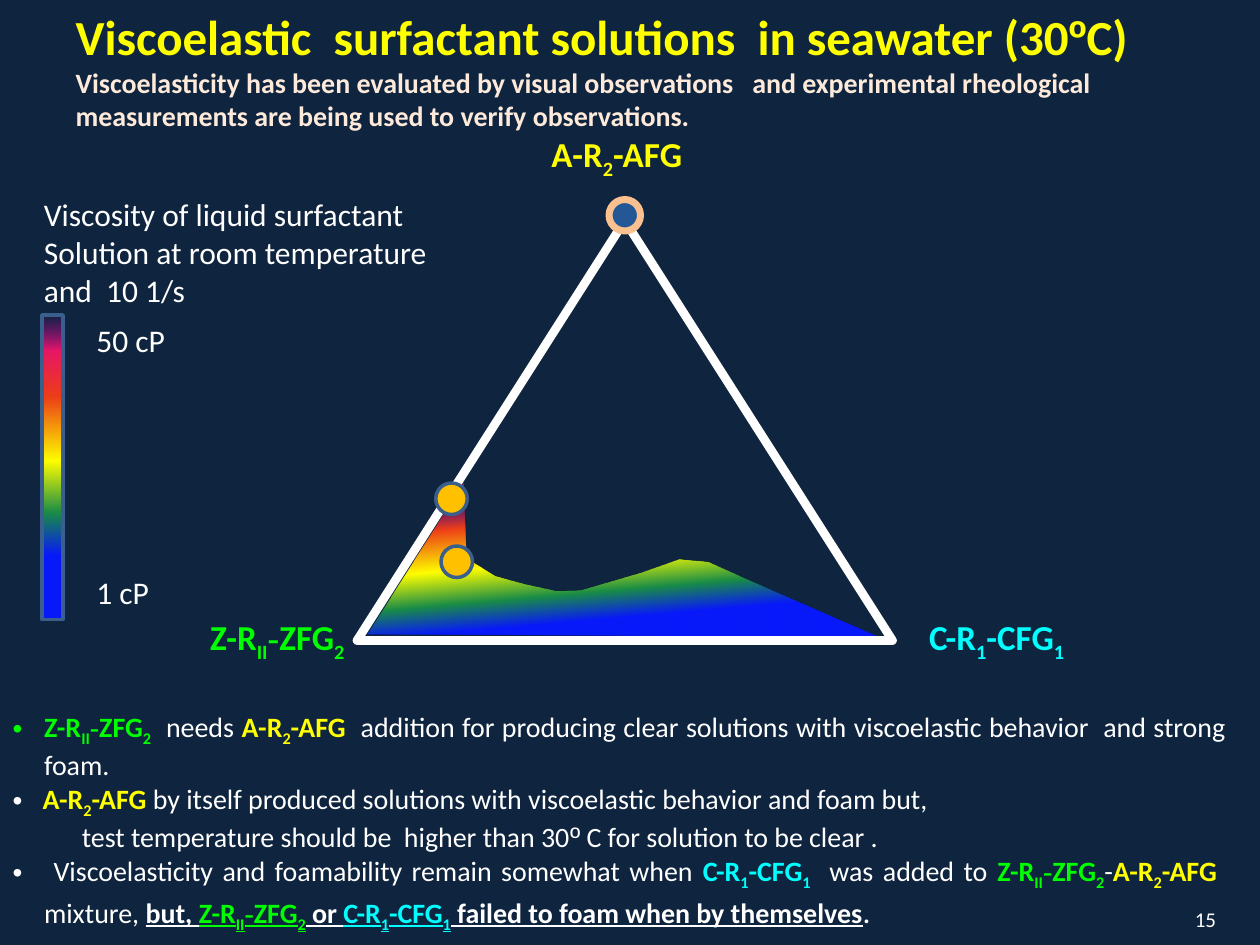
from lxml import etree
from pptx import Presentation
from pptx.dml.color import RGBColor
from pptx.enum.shapes import MSO_SHAPE
from pptx.enum.text import MSO_ANCHOR, MSO_AUTO_SIZE, PP_ALIGN
from pptx.oxml.ns import qn
from pptx.util import Pt

LEFT, CENTER, RIGHT, JUSTIFY = PP_ALIGN.LEFT, PP_ALIGN.CENTER, PP_ALIGN.RIGHT, PP_ALIGN.JUSTIFY
TOP, MIDDLE = MSO_ANCHOR.TOP, MSO_ANCHOR.MIDDLE
NO_FIT = MSO_AUTO_SIZE.NONE
RECT, OVAL, TRIANGLE = MSO_SHAPE.RECTANGLE, MSO_SHAPE.OVAL, MSO_SHAPE.ISOSCELES_TRIANGLE

NAVY, WHITE, YELLOW, GREEN, CYAN = "0F243E", "FFFFFF", "FFFF00", "00FF00", "00FFFF"
PEACH, APRICOT, AMBER, BLUE, STEEL = "FDEADA", "FAC090", "FFC000", "245795", "3A5F8C"

SUB = {"sub": True}
COMPOUNDS = {
    "A": (YELLOW, [("A-R", {}), ("2", SUB), ("-AFG", {})]),
    "C": (CYAN, [("C-R", {}), ("1", SUB), ("-CFG", {}), ("1", SUB)]),
    "Z": (GREEN, [("Z-R", {}), ("II", SUB), ("-", {"name": "Times New Roman"}),
                  ("ZFG", {}), ("2", SUB)]),
}

# Gradient stops: position %, colour, opacity %
RAMP = [(21, "0819FB", 100), (35, "1A8D48", 100), (52, "FFFF00", 100), (73, "EE3F17", 100)]
REGION_STOPS = RAMP + [(88, "A603AB", 27), (88, "E81766", 100), (100, "A603AB", 100)]
SCALE_STOPS = RAMP + [(88, "E81766", 100), (100, "A603AB", 0), (100, "A603AB", 100)]

REGION = [(210, 362), (265, 276), (266, 301), (266.5, 316), (270, 321), (283, 329),
          (299.5, 333.5), (318, 337.5), (332, 337), (366.5, 327), (388, 319.5),
          (404.5, 321), (427, 331), (502, 363.5)]


def rgb(value):
    return RGBColor.from_string(value)


def points(*values):
    return [Pt(v) for v in values]


def compound(key, **fmt):
    """Runs of a surfactant name in its own colour, with subscripts."""
    color, parts = COMPOUNDS[key]
    return [(text, {"color": color, "bold": True, **fmt, **own}) for text, own in parts]


def add_runs(p, runs, **base):
    for text, own in runs:
        fmt = {"name": "Calibri", "color": WHITE, "bold": False, **base, **own}
        r = p.add_run()
        r.text = text
        r.font.color.rgb = rgb(fmt.pop("color"))
        if fmt.pop("sub", False):
            r._r.get_or_add_rPr().set("baseline", "-25000")
        for attr, value in fmt.items():
            setattr(r.font, attr, value)


def fill_text(tf, paragraphs, align=LEFT, anchor=TOP, wrap=True, **base):
    frame = {"word_wrap": wrap, "auto_size": NO_FIT, "vertical_anchor": anchor}
    for attr, value in frame.items():
        setattr(tf, attr, value)
    for i, runs in enumerate(paragraphs):
        p = tf.paragraphs[0] if i == 0 else tf.add_paragraph()
        p.alignment = align
        p.space_before = Pt(0)
        add_runs(p, runs, **base)


def add_label(shapes, box, paragraphs, wrap=False, **fmt):
    fill_text(shapes.add_textbox(*points(*box)).text_frame, paragraphs, wrap=wrap, **fmt)


def add_outlined(shapes, kind, box, line, width, fill=None):
    sp = shapes.add_shape(kind, *points(*box))
    sp.shadow.inherit = False
    sp.line.color.rgb = rgb(line)
    sp.line.width = Pt(width)
    if fill:
        sp.fill.solid()
        sp.fill.fore_color.rgb = rgb(fill)
    else:
        sp.fill.background()
    return sp


def set_gradient(sp, stops, angle):
    sp.fill.gradient()
    grad = sp._element.spPr.find(qn("a:gradFill"))
    for child in list(grad):
        grad.remove(child)
    gs_list = etree.SubElement(grad, qn("a:gsLst"))
    for pos, color, opacity in stops:
        gs = etree.SubElement(gs_list, qn("a:gs"), pos=str(pos * 1000))
        clr = etree.SubElement(gs, qn("a:srgbClr"), val=color)
        if opacity < 100:
            etree.SubElement(clr, qn("a:alpha"), val=str(opacity * 1000))
    etree.SubElement(grad, qn("a:lin"), ang=str(angle * 60000), scaled="0")


def place(sp, box):
    sp.left, sp.top, sp.width, sp.height = points(*box)


def add_title(s, box):
    title = s.shapes.title
    place(title, box)
    heading = {"size": Pt(28), "color": YELLOW}
    fill_text(title.text_frame, [
        [("Viscoelastic  surfactant solutions  in seawater (30", heading),
         ("º", {**heading, "name": "Arial"}), ("C)", heading)],
        [("Viscoelasticity has been evaluated by visual observations   and experimental "
          "rheological measurements are being used to verify observations.",
          {"size": Pt(16), "color": PEACH})],
    ], bold=True)


def add_region(s):
    """Viscoelastic area along the base of the diagram."""
    start, *rest = [tuple(points(*xy)) for xy in REGION]
    builder = s.shapes.build_freeform(*start)
    builder.add_line_segments(rest, close=True)
    sp = builder.convert_to_shape()
    sp.shadow.inherit = False
    sp.line.fill.background()
    set_gradient(sp, REGION_STOPS, 265)


def add_ternary(s, box):
    x, y, w, h = box
    shapes = s.shapes.add_group_shape().shapes
    add_outlined(shapes, TRIANGLE, box, WHITE, 5)
    for key, dx, dy, width, align in [("A", 103, -54, 91, CENTER),
                                      ("Z", -94, h - 18, 94, RIGHT),
                                      ("C", w + 12, h - 18, 95, CENTER)]:
        add_label(shapes, (x + dx, y + dy, width, 31.5), [compound(key)],
                  align=align, size=Pt(20))
    d = 18
    for dx, dy, line, width, fill in [((w - d) / 2, -12, APRICOT, 4, BLUE),
                                      (45, 150, STEEL, 2, AMBER),
                                      (48, 186, STEEL, 2, AMBER)]:
        add_outlined(shapes, OVAL, (x + dx, y + dy, d, d), line, width, fill)


def add_findings(s, box):
    body = s.placeholders[1]
    place(body, box)
    under = {"bold": True, "underline": True}
    plain = {}
    paragraphs = [
        [*compound("Z"), ("  needs ", plain), *compound("A"),
         ("  addition for producing clear solutions with viscoelastic behavior  "
          "and strong foam.", plain)],
        [(" ", plain), *compound("A"),
         (" by itself produced solutions with viscoelastic behavior and foam but,", plain)],
        [("\t test temperature should be  higher than 30", plain), ("º", {"name": "Arial"}),
         (" C for solution to be clear .", plain)],
        [(" Viscoelasticity and foamability remain somewhat when ", plain), *compound("C"),
         ("  was added to ", plain), *compound("Z"), ("-", plain), *compound("A"),
         ("  mixture, ", plain), ("but, ", under), *compound("Z", underline=True),
         (" or ", under), *compound("C", underline=True),
         (" failed to foam when by themselves", under), (".", {"size": Pt(18)})],
    ]
    tf = body.text_frame
    fill_text(tf, paragraphs, align=JUSTIFY, size=Pt(16))
    for p, indent in zip(tf.paragraphs, (18, 13.5, 0, 18)):
        pPr = p._p.get_or_add_pPr()
        pPr.set("marL", str(Pt(indent)))
        pPr.set("indent", str(-Pt(indent)))
        if not indent:
            etree.SubElement(pPr, qn("a:buNone"))


def add_scale(s, box):
    """Viscosity colour bar with its caption and end values."""
    x, y, w, h = box
    bar = add_outlined(s.shapes, RECT, box, STEEL, 2)
    set_gradient(bar, SCALE_STOPS, 270)
    caption = ["Viscosity of liquid surfactant", "Solution at room temperature", "and  10 1/s"]
    for dx, dy, width, height, lines in [(24, 0, 54, 29, ["50 cP"]),
                                         (24, 144, 45, 29, ["1 cP"]),
                                         (-6, -72, 236, 73, caption)]:
        add_label(s.shapes, (x + dx, y + dy, width, height),
                  [[(line, {})] for line in lines], size=Pt(18))


def main():
    prs = Presentation()
    prs.slide_width, prs.slide_height = points(720, 540)
    s = prs.slides.add_slide(prs.slide_layouts[1])
    s.background.fill.solid()
    s.background.fill.fore_color.rgb = rgb(NAVY)
    add_region(s)
    add_title(s, (36, 0, 660, 80))
    add_ternary(s, (204, 126, 306, 240))
    add_findings(s, (0, 402, 708, 131))
    add_label(s.shapes, (642, 510, 60, 30), [[("15", {})]], wrap=True,
              align=RIGHT, anchor=MIDDLE, size=Pt(12))
    add_scale(s, (24, 180, 12, 174))
    prs.save("out.pptx")


if __name__ == "__main__":
    main()
